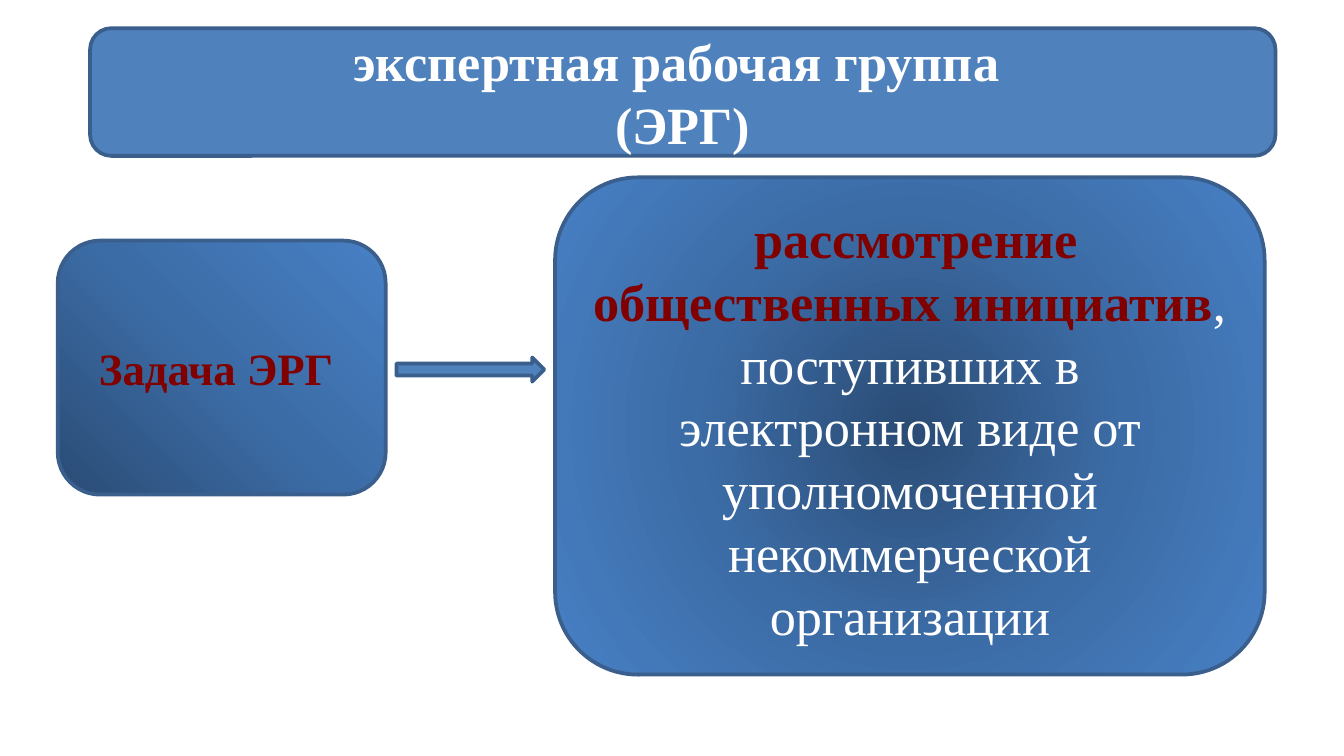
from lxml import etree
from pptx import Presentation
from pptx.dml.color import RGBColor
from pptx.enum.shapes import MSO_SHAPE
from pptx.enum.text import MSO_ANCHOR, PP_ALIGN
from pptx.oxml.ns import qn
from pptx.util import Inches, Pt

ROUNDED, ARROW = MSO_SHAPE.ROUNDED_RECTANGLE, MSO_SHAPE.RIGHT_ARROW
MIDDLE, CENTER = MSO_ANCHOR.MIDDLE, PP_ALIGN.CENTER

THEME = {
    "blue": "4F81BD", "outline": "3A5F8C", "white": "FFFFFF", "maroon": "800000",
    "gradient": [(0, "2A4C75"), (50, "3C6CA6"), (100, "4780C5")],
    "font": "Times New Roman", "lead_font": "Calibri",
    "large": 28, "medium": 24, "line": 2,
}
SLIDE_WIDTH = 10

# Content: each paragraph is a list of (text, format) runs
BOLD_WHITE = {"bold": True}
BOLD_MAROON = {"bold": True, "color": THEME["maroon"]}
TITLE = [[("экспертная рабочая группа ", BOLD_WHITE)], [("(ЭРГ)", BOLD_WHITE)]]
TASK = [[("Задача ЭРГ ", {**BOLD_MAROON, "size": THEME["medium"]})]]
DESCRIPTION = [[
    (" ", {"font": THEME["lead_font"]}),
    ("рассмотрение общественных инициатив", BOLD_MAROON),
    (", поступивших в электронном виде от уполномоченной "
     "некоммерческой организации", {}),
]]

# Gradient centres as left, top, right, bottom percentages
BOTTOM_LEFT = (0, 100, 100, 0)
MIDPOINT = (50, 50, 50, 50)

# Shape, position and size, gradient centre (None for plain), text
PARTS = [
    (ROUNDED, (0.67, 0.21, 8.82, 0.95), None, TITLE),
    (ROUNDED, (0.43, 1.79, 2.44, 1.89), BOTTOM_LEFT, TASK),
    (ROUNDED, (4.13, 1.32, 5.28, 3.7), MIDPOINT, DESCRIPTION),
    (ARROW, (2.95, 2.66, 1.1, 0.18), None, []),
]


def add_run(p, text, font=THEME["font"], size=THEME["large"],
            color=THEME["white"], bold=False):
    r = p.add_run()
    r.text = text
    r.font.name, r.font.size, r.font.bold = font, Pt(size), bold
    r.font.color.rgb = RGBColor.from_string(color)


def fill_radial(sp, center):
    """Give the shape the theme gradient, spreading from center."""
    sp.fill.background()
    grad = etree.Element(qn("a:gradFill"), rotWithShape="1")
    stops = etree.SubElement(grad, qn("a:gsLst"))
    for pos, color in THEME["gradient"]:
        stop = etree.SubElement(stops, qn("a:gs"), pos=str(pos * 1000))
        etree.SubElement(stop, qn("a:srgbClr"), val=color)
    ring = etree.SubElement(grad, qn("a:path"), path="circle")
    sides = {side: str(value * 1000) for side, value in zip("ltrb", center)}
    etree.SubElement(ring, qn("a:fillToRect"), **sides)
    props = sp._element.spPr
    props.replace(props.find(qn("a:noFill")), grad)


def add_part(s, kind, box, center, paragraphs):
    sp = s.shapes.add_shape(kind, *map(Inches, box))
    sp.shadow.inherit = False
    if center:
        fill_radial(sp, center)
    else:
        sp.fill.solid()
        sp.fill.fore_color.rgb = RGBColor.from_string(THEME["blue"])
    sp.line.color.rgb = RGBColor.from_string(THEME["outline"])
    sp.line.width = Pt(THEME["line"])
    tf = sp.text_frame
    tf.word_wrap, tf.vertical_anchor = True, MIDDLE
    for i, runs in enumerate(paragraphs):
        p = tf.add_paragraph() if i else tf.paragraphs[0]
        p.alignment = CENTER
        for text, style in runs:
            add_run(p, text, **style)


def main():
    prs = Presentation()
    # Widescreen 16:9
    prs.slide_width = Inches(SLIDE_WIDTH)
    prs.slide_height = Inches(SLIDE_WIDTH * 9 / 16)
    s = prs.slides.add_slide(prs.slide_layouts[6])
    for part in PARTS:
        add_part(s, *part)
    prs.save("out.pptx")


if __name__ == "__main__":
    main()
